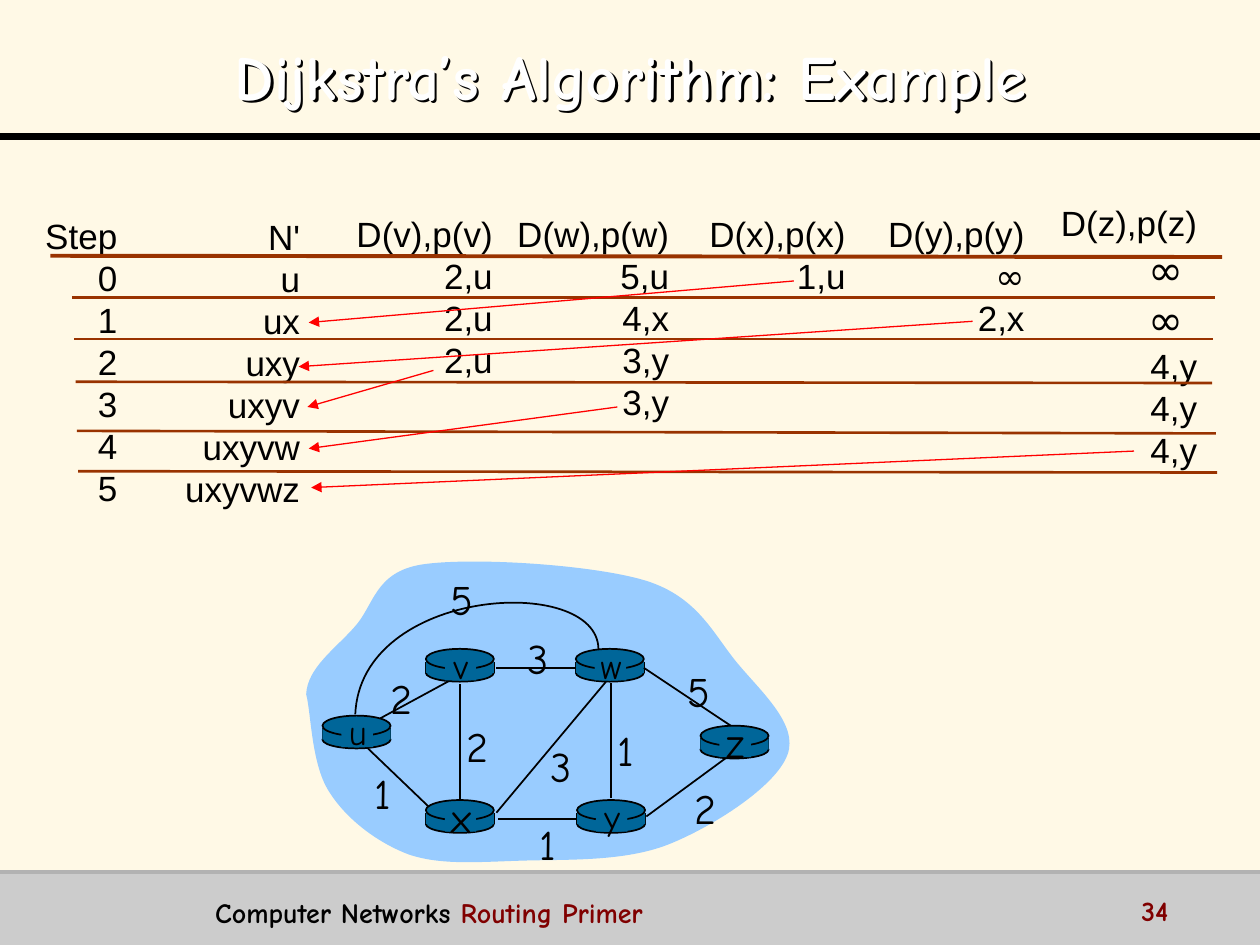
from lxml.etree import SubElement
from pptx import Presentation
from pptx.dml.color import RGBColor
from pptx.enum.shapes import MSO_CONNECTOR, MSO_SHAPE
from pptx.enum.text import MSO_ANCHOR, PP_ALIGN
from pptx.oxml import parse_xml
from pptx.oxml.ns import nsdecls, qn
from pptx.util import Inches, Pt

SANS, COMIC = "Arial", "Comic Neue"
BLACK, BLUE, BROWN, RED, MAROON = "000000", "006699", "993300", "FF0000", "800000"

TITLE = "Dijkstra’s Algorithm: Example"

# Step table: left, top, width, lines
COLUMNS = [
    (0.26, 1.65, 0.77, ["Step", "0", "1", "2", "3", "4", "5"]),
    (1.37, 1.66, 1.11, ["N'", "u", "ux", "uxy", "uxyv", "uxyvw", "uxyvwz"]),
    (2.73, 1.64, 1.28, ["D(v),p(v)", "2,u", "2,u", "2,u"]),
    (3.91, 1.64, 1.5, ["D(w),p(w)", "5,u", "4,x", "3,y", "3,y"]),
    (5.53, 1.64, 1.28, ["D(x),p(x)", "1,u"]),
    (6.95, 1.64, 1.28, ["D(y),p(y)", "∞", "2,x"]),
    (8.32, 1.55, 1.28, ["D(z),p(z)", "∞ ", "∞ ", "4,y", "4,y", "4,y"]),
]
RULES = [
    (0.4, 2.03, 9.7, 2.04), (0.57, 2.36, 9.64, 2.36), (0.59, 2.69, 9.63, 2.69),
    (0.6, 3.03, 9.62, 3.04), (0.61, 3.42, 9.65, 3.44), (0.62, 3.74, 9.66, 3.75),
]
ARROWS = [
    (6.3, 2.23, 2.45, 2.56), (7.72, 2.55, 2.37, 2.91), (3.44, 2.94, 2.44, 3.23),
    (4.9, 3.23, 2.45, 3.56), (9, 3.58, 2.47, 3.87),
]

# Network: a start point, then three points for each curve
CLOUD = [
    (2.43, 5.51), (2.44, 5.3), (2.66, 5.15), (2.81, 4.98), (2.97, 4.81), (2.97, 4.54),
    (3.35, 4.48), (3.74, 4.42), (4.71, 4.48), (5.13, 4.61), (5.54, 4.74), (5.66, 5.03),
    (5.85, 5.26), (6.04, 5.49), (6.34, 5.75), (6.25, 5.99), (6.16, 6.24), (5.66, 6.56),
    (5.31, 6.7), (4.96, 6.84), (4.5, 6.82), (4.16, 6.83), (3.81, 6.84), (3.5, 6.87),
    (3.24, 6.78), (2.98, 6.68), (2.74, 6.49), (2.61, 6.28), (2.47, 6.06), (2.47, 5.66),
    (2.43, 5.51),
]
ARC_UW = [(4.75, 5.15), (4.74, 4.55), (2.86, 4.66), (2.82, 5.67)]
# Router: name, left, top, label size
ROUTERS = [
    ("u", 2.56, 5.68, 20), ("x", 3.38, 6.35, 24), ("v", 3.38, 5.15, 20),
    ("w", 4.57, 5.15, 20), ("y", 4.58, 6.35, 20), ("z", 5.56, 5.76, 24),
]
EDGES = [
    (3.02, 5.7, 3.61, 5.38), (4.85, 5.42, 4.85, 6.33), (3.65, 5.43, 3.65, 6.36),
    (3.94, 6.45, 4.81, 5.41), (5.13, 6.48, 5.77, 6.01), (4.58, 6.5, 3.95, 6.5),
    (3.4, 6.4, 2.92, 5.94), (4.57, 5.3, 3.94, 5.3), (5.8, 5.76, 5.11, 5.3),
]
# Edge cost: text, left, top
COSTS = [
    ("2", 3, 5.29), ("2", 3.6, 5.67), ("1", 2.86, 6.04), ("3", 4.27, 5.83),
    ("1", 4.17, 6.45), ("1", 4.79, 5.7), ("2", 5.41, 6.16), ("5", 5.36, 5.23),
    ("3", 4.09, 4.97), ("5", 3.48, 4.5),
]
ROUTER_W = 0.54

prs = Presentation()
prs.slide_width, prs.slide_height = Inches(10), Inches(7.5)
s = prs.slides.add_slide(prs.slide_layouts[5])


def rgb(color):
    return RGBColor.from_string(color)


def style(r, size, font, color=BLACK, bold=False):
    r.font.size, r.font.name, r.font.bold = Pt(size), font, bold
    r.font.color.rgb = rgb(color)


def finish(sp, fill=None, line=None):
    sp.shadow.inherit = False
    if fill:
        sp.fill.solid()
        sp.fill.fore_color.rgb = rgb(fill)
    else:
        sp.fill.background()
    if line:
        sp.line.color.rgb, sp.line.width = rgb(line), Pt(1)
    else:
        sp.line.fill.background()


def shape(kind, x, y, w, h, fill, line=None):
    finish(s.shapes.add_shape(kind, Inches(x), Inches(y), Inches(w), Inches(h)), fill, line)


def line(x1, y1, x2, y2, color=BLACK, width=1, arrow=False):
    c = s.shapes.add_connector(MSO_CONNECTOR.STRAIGHT, Inches(x1), Inches(y1), Inches(x2), Inches(y2))
    c.line.color.rgb, c.line.width = rgb(color), Pt(width)
    if arrow:
        SubElement(c.line._get_or_add_ln(), qn("a:tailEnd"), type="triangle")
    SubElement(c._element.spPr, qn("a:effectLst"))


def curve(points, close=False, **look):
    pts = [(Inches(x), Inches(y)) for x, y in points]
    fb = s.shapes.build_freeform(*pts[0])
    fb.add_line_segments(pts[1:], close=close)
    sp = fb.convert_to_shape()
    segments = list(sp._element.iter(qn("a:lnTo")))
    # Every three straight segments become one Bezier curve
    for i in range(0, len(points) - 1, 3):
        bez = parse_xml(f"<a:cubicBezTo {nsdecls('a')}/>")
        segments[i].addprevious(bez)
        for seg in segments[i:i + 3]:
            bez.append(seg[0])
            seg.getparent().remove(seg)
    finish(sp, **look)


def textbox(x, y, w, h, text, size, font=COMIC, align=PP_ALIGN.CENTER, wrap=False):
    tf = s.shapes.add_textbox(Inches(x), Inches(y), Inches(w), Inches(h)).text_frame
    tf.word_wrap = wrap
    tf.text = text
    for p in tf.paragraphs:
        p.alignment = align
        for r in p.runs:
            style(r, size, font)
    return tf


# Background, title and footer band
s.background.fill.solid()
s.background.fill.fore_color.rgb = rgb("FFF9E6")
shape(MSO_SHAPE.RECTANGLE, 0, 6.92, 10, 0.58, "CCCCCC")
line(0, 1.08, 10, 1.08, BLACK, 4)
line(0, 6.92, 10, 6.92, "B2B2B2", 2)

title = s.shapes.title
title.left, title.top, title.width, title.height = map(Inches, (0.2, 0.13, 9.61, 0.87))
tf = title.text_frame
tf.text, tf.vertical_anchor = TITLE, MSO_ANCHOR.MIDDLE
p = tf.paragraphs[0]
p.alignment, p.line_spacing = PP_ALIGN.CENTER, 1.1
style(p.runs[0], 36, COMIC, "FFFFFF", True)
# An unfilled shape casts its shadow from the letters
title.fill.background()
title._element.spPr.append(parse_xml(
    f'<a:effectLst {nsdecls("a")}><a:outerShdw dist="25400" dir="2700000">'
    f'<a:srgbClr val="{BLACK}"/></a:outerShdw></a:effectLst>'))

# Step table
for x, y, w, rows in COLUMNS:
    tf = textbox(x, y, w, 0.1 + len(rows) / 3, "\n".join(rows), 20, SANS, PP_ALIGN.RIGHT)
    for p in tf.paragraphs:
        size = 24 if p.text == "∞ " else 20
        p.line_spacing = Pt(1.2 * size)
        if "∞" in p.text:
            style(p.runs[0], size, COMIC)
for i, ends in enumerate(RULES):
    line(*ends, BROWN, 1.5 if i else 2.25)

# Network
curve(CLOUD, close=True, fill="99CCFF")
for _, x, y, _ in ROUTERS:
    shape(MSO_SHAPE.OVAL, x, y + 0.12, ROUTER_W, 0.14, BLUE, BLACK)
    for side in (x, x + ROUTER_W):
        line(side, y + 0.1, side, y + 0.19)
    shape(MSO_SHAPE.RECTANGLE, x, y + 0.1, ROUTER_W, 0.09, BLUE)
    shape(MSO_SHAPE.OVAL, x, y, ROUTER_W, 0.16, BLUE, BLACK)
for ends in EDGES:
    line(*ends)
curve(ARC_UW, line=BLACK)
for name, x, y, size in ROUTERS:
    shape(MSO_SHAPE.RECTANGLE, x + 0.15, y + 0.02, 0.25, 0.23, BLUE)
    h = 0.1 + size / 60
    textbox(x + 0.08, y + 0.13 - h / 2, 0.4, h, name, size)
for cost, x, y in COSTS:
    textbox(x, y, 0.35, 0.4, cost, 24)

# Arrows from the chosen distance to the next set
for ends in ARROWS:
    line(*ends, RED, 0.75, arrow=True)

# Footer
p = textbox(1.61, 7.06, 7.2, 0.31, "Computer Networks ", 16, align=PP_ALIGN.LEFT, wrap=True).paragraphs[0]
p.runs[0].font.bold = True
r = p.add_run()
r.text = "Routing Primer"
style(r, 16, COMIC, MAROON, True)
number = textbox(8.96, 7.04, 1, 0.25, "34", 16, align=PP_ALIGN.LEFT, wrap=True)
style(number.paragraphs[0].runs[0], 16, COMIC, MAROON, True)

prs.save("out.pptx")
